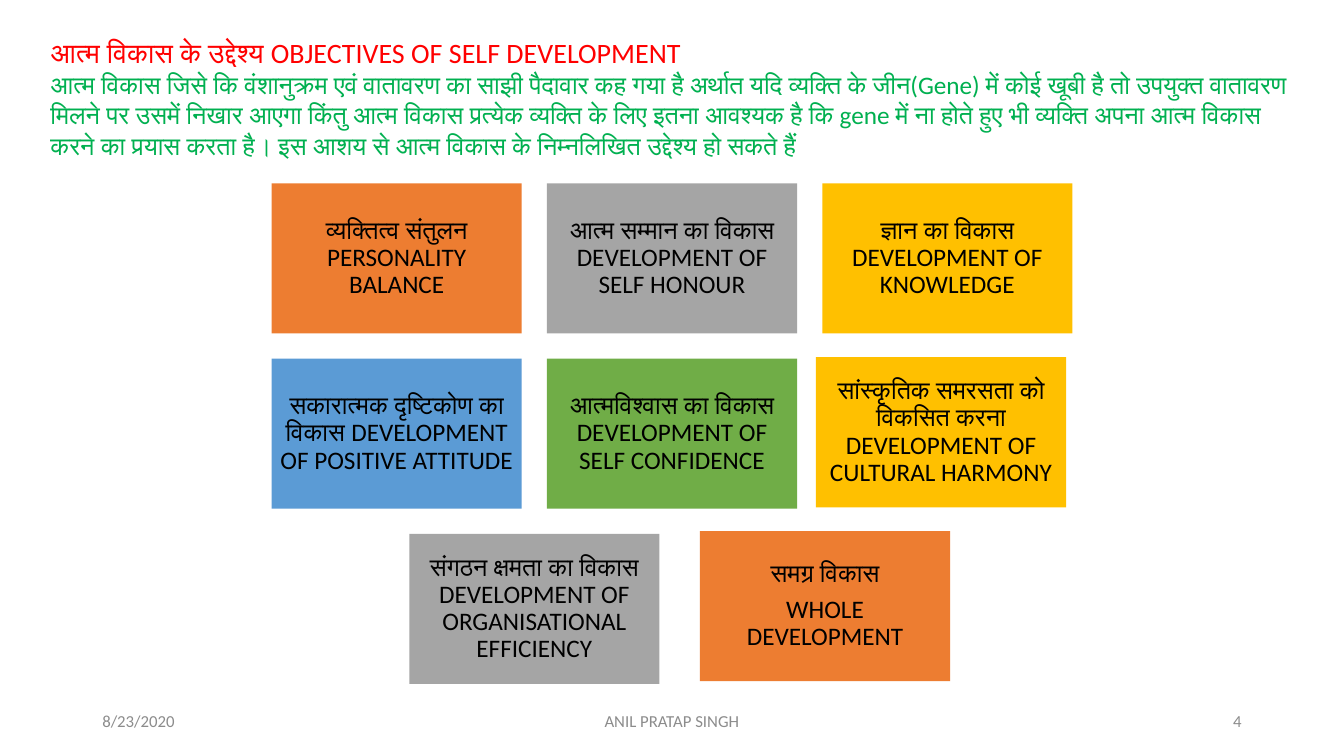
import pptx
import pptx.util
import pptx.dml.color
import pptx.enum.shapes
import pptx.enum.text
import pptx.oxml.ns
import lxml.etree

Pt = pptx.util.Pt
ALIGN = pptx.enum.text.PP_ALIGN
ANCHOR = pptx.enum.text.MSO_ANCHOR

COLOURS = {
    "heading": "FF0000", "intro": "00B050", "footer": "8C8C8C", "text": "000000",
    "orange": "ED7D31", "grey": "A5A5A5", "gold": "FFC000",
    "blue": "5B9BD5", "green": "70AD47",
}

HEADING = "आत्म विकास के उद्देश्य OBJECTIVES OF SELF DEVELOPMENT"
INTRO = (
    "आत्म विकास जिसे कि वंशानुक्रम एवं वातावरण का साझी पैदावार कह गया है अर्थात "
    "यदि व्यक्ति के जीन(Gene) में कोई खूबी है तो उपयुक्त वातावरण मिलने पर उसमें "
    "निखार आएगा किंतु आत्म विकास प्रत्येक व्यक्ति के लिए इतना आवश्यक है कि gene में "
    "ना होते हुए भी व्यक्ति अपना आत्म विकास करने का प्रयास करता है। इस आशय से "
    "आत्म विकास के निम्नलिखित उद्देश्य हो सकते हैं"
)

# column, row, horizontal nudge, vertical nudge, fill, paragraphs
OBJECTIVES = [
    (0, 0, 0, 0, "orange", ["व्यक्तित्व संतुलन PERSONALITY BALANCE"]),
    (1, 0, 0, 0, "grey", ["आत्म सम्मान का विकास DEVELOPMENT OF SELF HONOUR"]),
    (2, 0, 0, 0, "gold", ["ज्ञान का विकास DEVELOPMENT OF KNOWLEDGE"]),
    (0, 1, 0, 0, "blue", ["सकारात्मक दृष्टिकोण का विकास DEVELOPMENT OF POSITIVE ATTITUDE"]),
    (1, 1, 0, 0, "green", ["आत्मविश्वास का विकास DEVELOPMENT OF SELF CONFIDENCE"]),
    (1.5, 2, 11, -2, "orange", ["समग्र विकास", "WHOLE DEVELOPMENT"]),
    (0.5, 2, 0, 0, "grey", ["संगठन क्षमता का विकास DEVELOPMENT OF ORGANISATIONAL EFFICIENCY"]),
    (2, 1, -4.5, -1, "gold", ["सांस्कृतिक समरसता को विकसित करना DEVELOPMENT OF CULTURAL HARMONY"]),
]


def colour(name):
    return pptx.dml.color.RGBColor.from_string(COLOURS[name])


def apply(target, values):
    for name, value in values.items():
        setattr(target, name, value)


def place(shape, box):
    apply(shape, dict(zip(("left", "top", "width", "height"), map(Pt, box))))


def write(shape, texts, size, ink, para_format, anchor, inset=(7.2, 3.6)):
    frame = shape.text_frame
    side, end = map(Pt, inset)
    apply(frame, {
        "word_wrap": True, "auto_size": pptx.enum.text.MSO_AUTO_SIZE.NONE,
        "vertical_anchor": anchor, "margin_left": side, "margin_right": side,
        "margin_top": end, "margin_bottom": end,
    })
    for index, text in enumerate(texts):
        para = frame.add_paragraph() if index else frame.paragraphs[0]
        apply(para, para_format)
        span = para.add_run()
        span.text = text
        apply(span.font, {"size": Pt(size), "name": "Calibri"})
        span.font.color.rgb = colour(ink)


def build_header(page, box):
    left, top, width, height = box
    title_height = 28
    title, body = page.placeholders
    place(title, (left, top, width, title_height))
    place(body, (left, top + title_height - 3.6, width, height - title_height + 3.6))
    plain = {"alignment": ALIGN.LEFT, "space_before": Pt(0), "line_spacing": 1.0}
    write(title, [HEADING], 20, "heading", plain, ANCHOR.TOP)
    write(body, [INTRO], 18, "intro", plain, ANCHOR.TOP)
    properties = body.text_frame.paragraphs[0]._p.get_or_add_pPr()
    properties.set("marL", "0")
    properties.set("indent", "0")
    lxml.etree.SubElement(properties, pptx.oxml.ns.qn("a:buNone"))


def build_objectives(page, box):
    left, top, width, height = box
    gap = 18
    card_width = (width - 2 * gap) / 3
    card_height = (height - 2 * gap) / 3
    centred = {"alignment": ALIGN.CENTER, "line_spacing": 0.9, "space_after": Pt(6.3)}
    for column, row, right, down, fill, texts in OBJECTIVES:
        card = page.shapes.add_shape(pptx.enum.shapes.MSO_SHAPE.RECTANGLE, 0, 0, 0, 0)
        place(card, (
            left + column * (card_width + gap) + right,
            top + row * (card_height + gap) + down,
            card_width, card_height,
        ))
        card.shadow.inherit = False
        card.fill.solid()
        card.fill.fore_color.rgb = colour(fill)
        card.line.fill.background()
        write(card, texts, 18, "text", centred, ANCHOR.MIDDLE, (5, 5))


def build_footer(page, box):
    left, top, width, height = box
    side, middle = 216, 324
    parts = [
        ("8/23/2020", left, side, ALIGN.LEFT),
        ("ANIL PRATAP SINGH", left + (width - middle) / 2, middle, ALIGN.CENTER),
        ("4", left + width - side, side, ALIGN.RIGHT),
    ]
    for text, start, span_width, alignment in parts:
        label = page.shapes.add_textbox(0, 0, 0, 0)
        place(label, (start, top, span_width, height))
        write(label, [text], 12, "footer", {"alignment": alignment}, ANCHOR.MIDDLE)


def main():
    deck = pptx.Presentation()
    apply(deck, {"slide_width": Pt(960), "slide_height": Pt(540)})
    page = deck.slides.add_slide(deck.slide_layouts[1])
    build_header(page, (28.8, 21.6, 911.5, 97.2))
    build_objectives(page, (194, 131, 572, 357.5))
    build_footer(page, (66, 500.5, 828, 28.8))
    deck.save("out.pptx")


if __name__ == "__main__":
    main()
